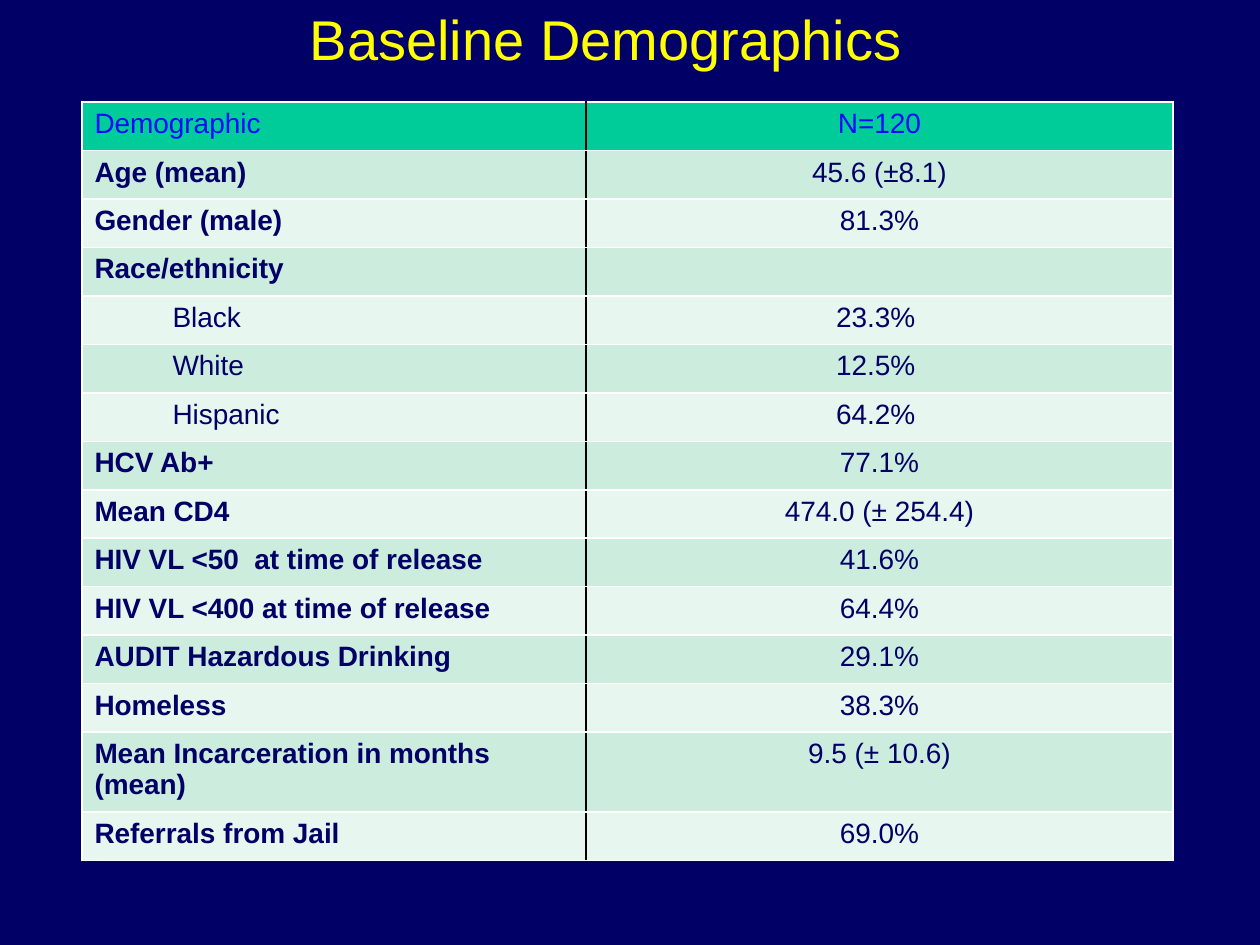
from lxml import etree
from pptx import Presentation
from pptx.dml.color import RGBColor
from pptx.enum import text
from pptx.oxml.ns import qn
from pptx.util import Inches, Pt

NAVY = RGBColor(0x00, 0x00, 0x66)
YELLOW = RGBColor(0xFF, 0xFF, 0x00)
BLUE = RGBColor(0x0A, 0x0A, 0xFF)
GREEN = RGBColor(0x00, 0xCC, 0x99)
MINT = RGBColor(0xCC, 0xEC, 0xDE)
PALE = RGBColor(0xE7, 0xF6, 0xEF)
WHITE = RGBColor(0xFF, 0xFF, 0xFF)
BLACK = RGBColor(0x00, 0x00, 0x00)

ROWS = [
    ("Demographic", "N=120"),
    ("Age (mean)", "45.6 (±8.1)"),
    ("Gender (male)", "81.3%"),
    ("Race/ethnicity", ""),
    ("Black", "23.3% "),
    ("White", "12.5% "),
    ("Hispanic", "64.2% "),
    ("HCV Ab+", "77.1%"),
    ("Mean CD4", "474.0 (± 254.4)"),
    ("HIV VL <50  at time of release", "41.6%"),
    ("HIV VL <400 at time of release", "64.4%"),
    ("AUDIT Hazardous Drinking", "29.1%"),
    ("Homeless", "38.3%"),
    ("Mean Incarceration in months (mean)", "9.5 (± 10.6)"),
    ("Referrals from Jail", "69.0%"),
]
RACES = ("Black", "White", "Hispanic")
TALL = 13


def style(para, size, color, bold=False):
    font = para.font
    font.name, font.size, font.bold = "Arial", Pt(size), bold
    font.color.rgb = color


def border(cell, sides):
    """Draw cell edges; sides maps lnL, lnR, lnT, lnB (in that order) to a colour."""
    props = cell._tc.get_or_add_tcPr()
    for spot, (side, color) in enumerate(sides.items()):
        line = etree.Element(qn("a:" + side), w=str(Pt(1)))
        fill = etree.SubElement(line, qn("a:solidFill"))
        etree.SubElement(fill, qn("a:srgbClr"), val=str(color))
        props.insert(spot, line)


prs = Presentation()
prs.slide_width, prs.slide_height = Inches(10), Inches(7.5)
slide = prs.slides.add_slide(prs.slide_layouts[6])
slide.background.fill.solid()
slide.background.fill.fore_color.rgb = NAVY

title = slide.shapes.add_textbox(Inches(0.31), Inches(-0.01), Inches(9), Inches(0.62))
frame = title.text_frame
frame.word_wrap = True
frame.vertical_anchor = text.MSO_ANCHOR.MIDDLE
para = frame.paragraphs[0]
para.text = "Baseline Demographics"
para.alignment = text.PP_ALIGN.CENTER
style(para, 32, YELLOW)

table = slide.shapes.add_table(
    len(ROWS), 2, Inches(0.65), Inches(0.81), Inches(8.66), Inches(5.98)
).table
table.columns[0].width = Inches(4)
table.columns[1].width = Inches(4.66)

for r, row in enumerate(ROWS):
    table.rows[r].height = Inches(0.59) if r == TALL else Inches(5.39 / 14)
    shade = GREEN if r == 0 else MINT if r % 2 else PALE
    for c, words in enumerate(row):
        cell = table.cell(r, c)
        cell.fill.solid()
        cell.fill.fore_color.rgb = shade
        para = cell.text_frame.paragraphs[0]
        para.text = words
        style(para, 16, NAVY if r else BLUE, r > 0 and c == 0 and words not in RACES)
        if c == 1:
            para.alignment = text.PP_ALIGN.CENTER
        elif words in RACES:
            cell.margin_left = Inches(0.72)
        border(cell, {
            "lnL": BLACK if c else WHITE,
            "lnR": WHITE if c else BLACK,
            "lnT": WHITE,
            "lnB": WHITE,
        })

prs.save("out.pptx")
